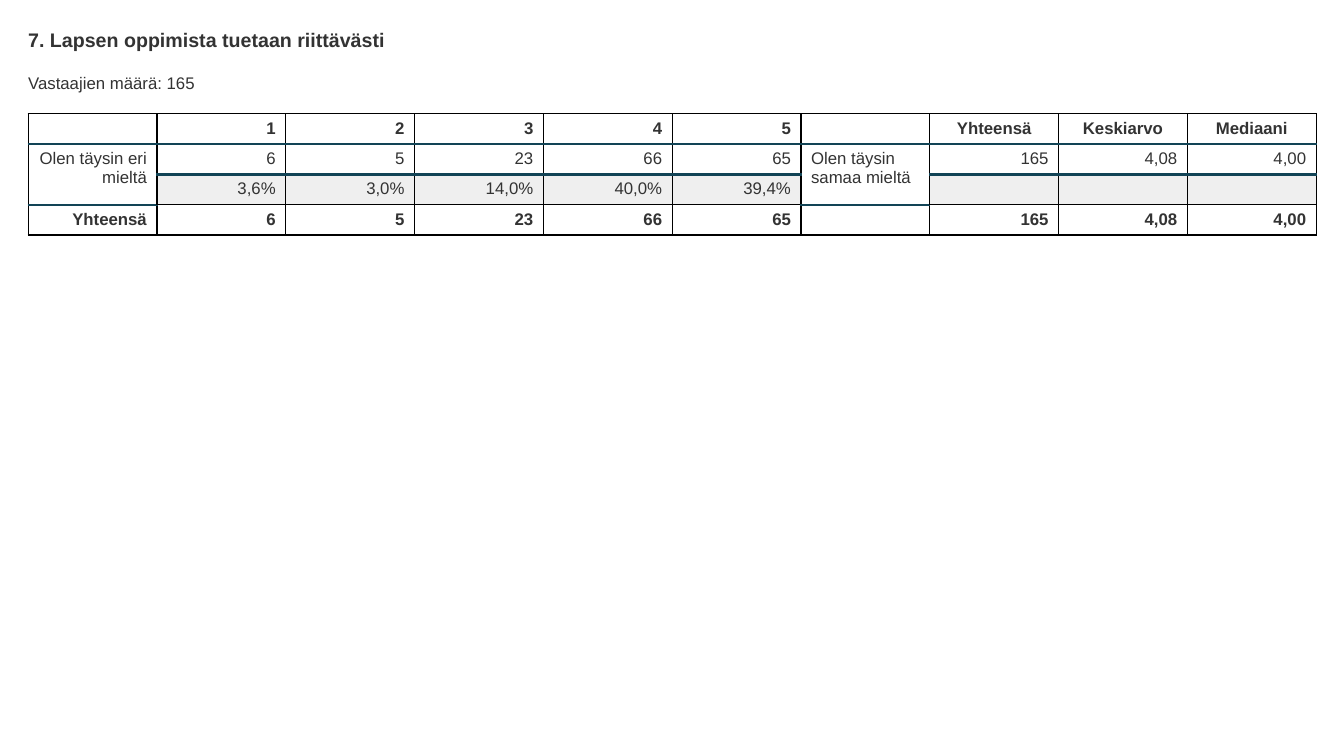
import pptx
import pptx.util
import pptx.dml.color
import pptx.enum.text
import pptx.oxml.ns
import lxml.etree

Cm = pptx.util.Cm
Pt = pptx.util.Pt
RGB = pptx.dml.color.RGBColor.from_string
ALIGN = pptx.enum.text.PP_ALIGN
qn = pptx.oxml.ns.qn

COLORS = {"text": "333333", "rule": "124456", "grid": "000000",
          "band": "EFEFEF", "white": "FFFFFF"}
LEFT, WIDTH, ROW_HEIGHT = 0.71, 32.46, 0.76
LABEL_COLS = (0, 6)


def style_text(p, size, bold):
    p.font.name = "Arial"
    p.font.size = Pt(size)
    p.font.bold = bold
    p.font.color.rgb = RGB(COLORS["text"])


def add_border(cell, side, color, width):
    tcPr = cell._tc.get_or_add_tcPr()
    ln = lxml.etree.SubElement(tcPr, qn("a:ln" + side), w=str(Pt(width)))
    fill = lxml.etree.SubElement(ln, qn("a:solidFill"))
    lxml.etree.SubElement(fill, qn("a:srgbClr"), val=COLORS[color])


prs = pptx.Presentation()
prs.slide_width = Cm(33.87)
prs.slide_height = Cm(19.05)
s = prs.slides.add_slide(prs.slide_layouts[6])

headings = [
    ("7. Lapsen oppimista tuetaan riittävästi", 0.71, 0.59, 14, True),
    ("Vastaajien määrä: 165", 1.84, 0.51, 12, False),
]
for text, top, height, size, bold in headings:
    tf = s.shapes.add_textbox(Cm(LEFT), Cm(top), Cm(WIDTH), Cm(height)).text_frame
    tf.word_wrap = True
    tf.margin_left = tf.margin_right = tf.margin_top = tf.margin_bottom = 0
    p = tf.paragraphs[0]
    p.text = text
    style_text(p, size, bold)

rows = [
    ["", "1", "2", "3", "4", "5", "", "Yhteensä", "Keskiarvo", "Mediaani"],
    ["Olen täysin eri mieltä", "6", "5", "23", "66", "65",
     "Olen täysin samaa mieltä", "165", "4,08", "4,00"],
    ["", "3,6%", "3,0%", "14,0%", "40,0%", "39,4%", "", "", "", ""],
    ["Yhteensä", "6", "5", "23", "66", "65", "", "165", "4,08", "4,00"],
]
table = s.shapes.add_table(len(rows), len(rows[0]), Cm(LEFT), Cm(2.87),
                           Cm(WIDTH), Cm(ROW_HEIGHT * len(rows))).table
table.first_row = False
table.horz_banding = False

for r, row in enumerate(rows):
    table.rows[r].height = Cm(ROW_HEIGHT)
    for c, text in enumerate(row):
        cell = table.cell(r, c)
        is_label = c in LABEL_COLS
        rule_above = r in (1, 2) or (r == 3 and is_label)
        rule_below = r in (0, 1) or (r == 2 and is_label)
        for side, is_rule in (("L", False), ("R", False),
                              ("T", rule_above), ("B", rule_below)):
            add_border(cell, side, "rule" if is_rule else "grid", 2 if is_rule else 1)
        cell.fill.solid()
        shade = "band" if r == 2 and not is_label else "white"
        cell.fill.fore_color.rgb = RGB(COLORS[shade])

        p = cell.text_frame.paragraphs[0]
        if text:
            p.text = text
        else:
            lxml.etree.SubElement(p._p, qn("a:endParaRPr"), sz="1200")
        style_text(p, 12, r in (0, 3))
        if c == 6:
            p.alignment = ALIGN.LEFT
        elif r == 0 and c > 6:
            p.alignment = ALIGN.CENTER
        else:
            p.alignment = ALIGN.RIGHT

for c in LABEL_COLS:
    table.cell(1, c).merge(table.cell(2, c))

prs.save("out.pptx")
